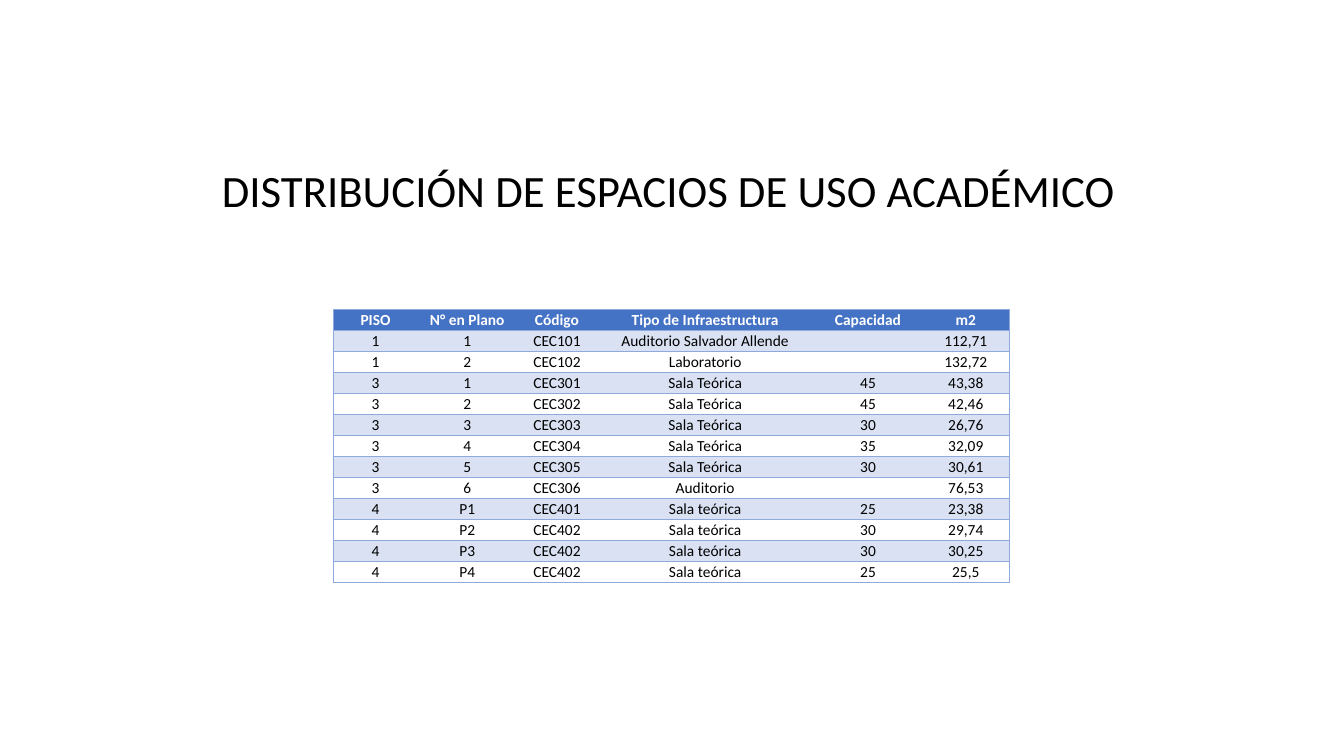
from lxml import etree
from pptx import Presentation
from pptx.dml.color import RGBColor
from pptx.enum.text import MSO_ANCHOR, MSO_AUTO_SIZE, PP_ALIGN
from pptx.oxml.ns import qn
from pptx.util import Inches, Pt

LEFT, CENTER = PP_ALIGN.LEFT, PP_ALIGN.CENTER
TOP, MIDDLE = MSO_ANCHOR.TOP, MSO_ANCHOR.MIDDLE
GROW = MSO_AUTO_SIZE.SHAPE_TO_FIT_TEXT

BLACK = RGBColor(0x00, 0x00, 0x00)
WHITE = RGBColor(0xFF, 0xFF, 0xFF)
HEADER_BLUE = RGBColor(0x44, 0x72, 0xC4)
BAND_BLUE = RGBColor(0xD9, 0xE1, 0xF2)
RULE_BLUE = RGBColor(0x8E, 0xA9, 0xDB)

TITLE = "DISTRIBUCIÓN DE ESPACIOS DE USO ACADÉMICO"
COLUMN_WIDTHS = [0.83, 0.99, 0.79, 2.15, 1.08, 0.86]
SPACES = [
    ("PISO", "N° en Plano", "Código", "Tipo de Infraestructura", "Capacidad", "m2"),
    ("1", "1", "CEC101", "Auditorio Salvador Allende", "", "112,71"),
    ("1", "2", "CEC102", "Laboratorio", "", "132,72"),
    ("3", "1", "CEC301", "Sala Teórica", "45", "43,38"),
    ("3", "2", "CEC302", "Sala Teórica", "45", "42,46"),
    ("3", "3", "CEC303", "Sala Teórica", "30", "26,76"),
    ("3", "4", "CEC304", "Sala Teórica", "35", "32,09"),
    ("3", "5", "CEC305", "Sala Teórica", "30", "30,61"),
    ("3", "6", "CEC306", "Auditorio", "", "76,53"),
    ("4", "P1", "CEC401", "Sala teórica", "25", "23,38"),
    ("4", "P2", "CEC402", "Sala teórica", "30", "29,74"),
    ("4", "P3", "CEC402", "Sala teórica", "30", "30,25"),
    ("4", "P4", "CEC402", "Sala teórica", "25", "25,5"),
]


class SlideBuilder:
    font = "Calibri"
    title_size = Pt(32)
    cell_size = Pt(11)
    rule_width = Pt(0.5)

    def __init__(self, slide):
        self.slide = slide

    def format_runs(self, p, size, color, bold=False):
        for r in p.runs:
            r.font.name = self.font
            r.font.size = size
            r.font.bold = bold
            r.font.color.rgb = color

    def title(self, text, left, top, width, height):
        sp = self.slide.shapes.title
        sp.left, sp.top = Inches(left), Inches(top)
        sp.width, sp.height = Inches(width), Inches(height)
        tf = sp.text_frame
        tf.text = text
        tf.word_wrap = True
        tf.auto_size = GROW
        tf.vertical_anchor = TOP
        p = tf.paragraphs[0]
        p.alignment = LEFT
        p.line_spacing = 1.07
        p.space_before, p.space_after = Pt(0), Pt(8)
        self.format_runs(p, self.title_size, BLACK)

    def borders(self, cell, ruled_sides):
        """Rule the given sides (of L, R, T, B) and clear the others."""
        tc_pr = cell._tc.get_or_add_tcPr()
        for side in "LRTB":
            ln = etree.SubElement(tc_pr, qn(f"a:ln{side}"), w=str(self.rule_width))
            if side in ruled_sides:
                fill = etree.SubElement(ln, qn("a:solidFill"))
                etree.SubElement(fill, qn("a:srgbClr"), val=str(RULE_BLUE))
            else:
                etree.SubElement(ln, qn("a:noFill"))

    def cell(self, cell, text, fill, color, bold, ruled_sides):
        cell.text = text
        cell.vertical_anchor = MIDDLE
        cell.margin_left = cell.margin_right = cell.margin_top = Inches(0.01)
        cell.margin_bottom = 0
        p = cell.text_frame.paragraphs[0]
        p.alignment = CENTER
        self.format_runs(p, self.cell_size, color, bold)
        if not text:
            # An empty cell needs its own size, or it stretches the row.
            size = str(int(self.cell_size.pt * 100))
            etree.SubElement(p._p, qn("a:endParaRPr"), sz=size)
        self.borders(cell, ruled_sides)
        if fill is None:
            cell.fill.background()
        else:
            cell.fill.solid()
            cell.fill.fore_color.rgb = fill

    def table(self, rows, widths, left, top, height):
        table = self.slide.shapes.add_table(
            len(rows), len(widths), Inches(left), Inches(top),
            Inches(sum(widths)), Inches(height)).table
        table.first_row = True
        table.horz_banding = False
        for column, width in zip(table.columns, widths):
            column.width = Inches(width)
        last = len(widths) - 1
        for i, row in enumerate(rows):
            header = i == 0
            fill = HEADER_BLUE if header else BAND_BLUE if i % 2 else None
            color = WHITE if header else BLACK
            for j, text in enumerate(row):
                sides = "TB" + ("L" if j == 0 else "R" if j == last else "")
                self.cell(table.cell(i, j), text, fill, color, header, sides)


def main():
    prs = Presentation()
    prs.slide_width, prs.slide_height = Inches(13.33), Inches(7.5)
    title_only = prs.slide_layouts[5]
    s = SlideBuilder(prs.slides.add_slide(title_only))
    s.title(TITLE, 2.1, 1.53, 9.13, 0.65)
    s.table(SPACES, COLUMN_WIDTHS, 3.31, 3.07, 2.71)
    prs.save("out.pptx")


if __name__ == "__main__":
    main()
